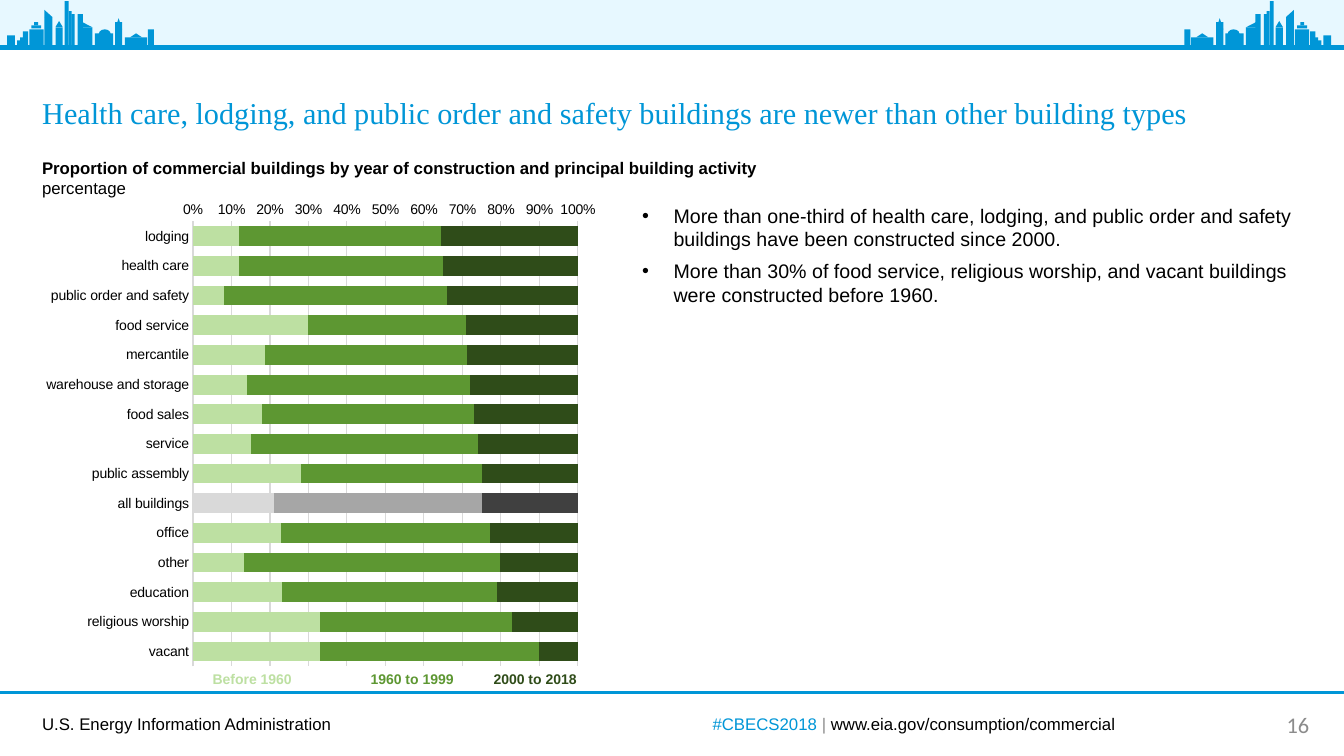
from lxml.etree import SubElement
from pptx import Presentation
from pptx.chart.data import CategoryChartData
from pptx.dml.color import RGBColor
from pptx.enum.chart import XL_CHART_TYPE, XL_TICK_MARK
from pptx.enum.shapes import MSO_CONNECTOR, MSO_SHAPE
from pptx.enum.text import MSO_ANCHOR, MSO_AUTO_SIZE, PP_ALIGN
from pptx.oxml import parse_xml
from pptx.oxml.ns import nsdecls, qn
from pptx.util import Cm, Pt

# Content
COLORS = {
    "blue": "0096D7", "sky": "E7F8FF", "black": "000000", "gray": "8C8C8C",
    "grid": "D9D9D9", "before 1960": "BDE0A2", "1960 to 1999": "5D9732",
    "2000 to 2018": "2F4C19",
}
TITLE = ("Health care, lodging, and public order and safety buildings "
         "are newer than other building types")
CAPTION = ("Proportion of commercial buildings by year of construction "
           "and principal building activity")
UNIT = "percentage"
FINDINGS = [
    "More than one-third of health care, lodging, and public order and safety "
    "buildings have been constructed since 2000.",
    "More than 30% of food service, religious worship, and vacant buildings "
    "were constructed before 1960.",
]
AGENCY = "U.S. Energy Information Administration"
LINKS = [("#CBECS2018 ", "blue"), ("| ", "gray"),
         ("www.eia.gov/consumption/commercial", "black")]
PAGE = "16"
ACTIVITIES = [
    "lodging", "health care", "public order and safety", "food service",
    "mercantile", "warehouse and storage", "food sales", "service",
    "public assembly", "all buildings", "office", "other", "education",
    "religious worship", "vacant",
]
# Period, shares, colour of the "all buildings" bar, label left, label width, wrap
PERIODS = [
    ("Before 1960", [12, 12, 8, 30, 19, 14, 18, 15, 28, 21, 23, 13, 23, 33, 33],
     "D9D9D9", 5.11, 2.82, True),
    ("1960 to 1999", [53, 53, 58, 41, 53, 58, 55, 59, 47, 54, 55, 66, 56, 50, 57],
     "A6A6A6", 9.09, 2.62, False),
    ("2000 to 2018", [36, 35, 34, 29, 29, 28, 27, 26, 25, 25, 23, 20, 21, 17, 10],
     "404040", 12.19, 2.62, False),
]

# Skyline in cm: walls stand on the ground (left, top, width)
GROUND = 1.17
WALLS = [
    (0.18, 0.89, 0.2), (0.43, 1.02, 0.08), (0.51, 0.94, 0.08), (0.58, 0.79, 0.13),
    (0.74, 0.74, 0.36), (1.12, 0.43, 0.2), (1.4, 0.69, 0.18), (1.63, 0.03, 0.1),
    (1.73, 0.28, 0.08), (1.8, 0.36, 0.08), (1.96, 0.36, 0.13), (2.08, 0.69, 0.25),
    (2.39, 0.84, 0.46), (2.9, 0.56, 0.18), (3.15, 0.94, 0.56), (3.73, 0.74, 0.15),
]
ROOFS = [
    (MSO_SHAPE.RECTANGLE, 0.79, 0.64, 0.25, 0.08),
    (MSO_SHAPE.RECTANGLE, 0.86, 0.56, 0.1, 0.08),
    (MSO_SHAPE.RIGHT_TRIANGLE, 1.12, 0.25, 0.2, 0.18),
    (MSO_SHAPE.ISOSCELES_TRIANGLE, 1.4, 0.53, 0.18, 0.15),
    (MSO_SHAPE.RIGHT_TRIANGLE, 2.08, 0.56, 0.25, 0.13),
    (MSO_SHAPE.OVAL, 2.49, 0.74, 0.3, 0.23),
    (MSO_SHAPE.ISOSCELES_TRIANGLE, 2.9, 0.46, 0.18, 0.28),
    (MSO_SHAPE.ISOSCELES_TRIANGLE, 3.28, 0.84, 0.3, 0.1),
]
WIDTH, HEIGHT = 33.87, 19.05
MIRROR = 33.73  # left edge plus mirrored right edge


def color(name):
    return RGBColor.from_string(COLORS[name])


def style(font, size, shade="black", bold=False, face="Arial"):
    font.name, font.size, font.bold = face, Pt(size), bold
    font.color.rgb = color(shade)


def add_block(preset, left, top, width, height, shade="blue", flip=False):
    block = slide.shapes.add_shape(preset, Cm(left), Cm(top), Cm(width), Cm(height))
    block.shadow.inherit = False
    block.fill.solid()
    block.fill.fore_color.rgb = color(shade)
    block.line.fill.background()
    if flip:
        block._element.spPr.find(qn("a:xfrm")).set("flipH", "1")


def add_rule(top, weight):
    rule = slide.shapes.add_connector(
        MSO_CONNECTOR.STRAIGHT, 0, Cm(top), Cm(WIDTH), Cm(top))
    rule.line.color.rgb = color("blue")
    rule.line.width = Pt(weight)
    SubElement(rule._element.spPr, qn("a:effectLst"))


def add_text(left, top, width, height, wrap=True, anchor=MSO_ANCHOR.TOP):
    frame = slide.shapes.add_textbox(
        Cm(left), Cm(top), Cm(width), Cm(height)).text_frame
    frame.word_wrap = wrap
    frame.vertical_anchor = anchor
    return frame


def move(shape, left, top, width, height):
    shape.left, shape.top = Cm(left), Cm(top)
    shape.width, shape.height = Cm(width), Cm(height)


prs = Presentation()
prs.slide_width, prs.slide_height = Cm(WIDTH), Cm(HEIGHT)
slide = prs.slides.add_slide(prs.slide_layouts[1])

# Header band with a skyline at each end
add_block(MSO_SHAPE.RECTANGLE, 0, 0, WIDTH, 1.14, "sky")
add_rule(1.19, 3.5)
skyline = [(MSO_SHAPE.RECTANGLE, left, top, width, GROUND - top)
           for left, top, width in WALLS] + ROOFS
for preset, left, top, width, height in skyline:
    add_block(preset, left, top, width, height)
    add_block(preset, MIRROR - left - width, top, width, height, flip=True)

# Title
title = slide.shapes.title
move(title, 0.81, 1.3, 32.23, 2.11)
title.text_frame.text = TITLE
title.text_frame.auto_size = MSO_AUTO_SIZE.NONE
title.text_frame.vertical_anchor = MSO_ANCHOR.BOTTOM
title.text_frame.paragraphs[0].alignment = PP_ALIGN.LEFT
style(title.text_frame.paragraphs[0].font, 21.6, "blue", face="Times New Roman")

# Findings
findings = slide.placeholders[1]
move(findings, 15.93, 5, 17.12, 2.87)
findings.text_frame.text = "\n".join(FINDINGS)
findings.text_frame.auto_size = MSO_AUTO_SIZE.NONE
for paragraph in findings.text_frame.paragraphs:
    paragraph.space_before, paragraph.space_after = Pt(0), Pt(6)
    style(paragraph.font, 14)
    properties = paragraph._p.get_or_add_pPr()
    properties.set("marL", str(Cm(0.79)))
    properties.set("indent", str(Cm(-0.79)))
    properties.find(qn("a:defRPr")).addprevious(
        parse_xml(f'<a:buChar {nsdecls("a")} char="•"/>'))

# Chart caption
caption = add_text(0.81, 3.84, 19.96, 1.27)
caption.text = CAPTION + "\n" + UNIT
for paragraph, bold in zip(caption.paragraphs, (True, False)):
    style(paragraph.font, 12, bold=bold)

# Chart of construction periods
shares = CategoryChartData()
shares.categories = ACTIVITIES
for period, values, *_ in PERIODS:
    shares.add_series(period, values)
chart = slide.shapes.add_chart(
    XL_CHART_TYPE.BAR_STACKED_100, Cm(0.81), Cm(4.85), Cm(14.48), Cm(12.19), shares).chart
chart.has_title = chart.has_legend = False
style(chart.font, 10)
bars = chart.plots[0]
bars.gap_width, bars.overlap, bars.vary_by_categories = 50, 100, False
for series, (period, _, total_shade, *_) in zip(bars.series, PERIODS):
    series.format.fill.solid()
    series.format.fill.fore_color.rgb = color(period.lower())
    total = series.points[ACTIVITIES.index("all buildings")].format.fill
    total.solid()
    total.fore_color.rgb = RGBColor.from_string(total_shade)

for axis in (chart.category_axis, chart.value_axis):
    axis.major_tick_mark = axis.minor_tick_mark = XL_TICK_MARK.NONE
    style(axis.tick_labels.font, 10)
chart.category_axis.reverse_order = True
percent_axis = chart.value_axis
percent_axis.minimum_scale, percent_axis.maximum_scale = 0, 1
percent_axis.major_unit = 0.1
percent_axis.tick_labels.number_format = "0%"
percent_axis.tick_labels.number_format_is_linked = False
percent_axis.has_major_gridlines = True
percent_axis.format.line.fill.background()
for line in (chart.category_axis.format.line, percent_axis.major_gridlines.format.line):
    line.color.rgb = color("grid")
    line.width = Pt(0.75)

# Fixed plot area, in shares of the chart
plot_area = chart._chartSpace.find(".//" + qn("c:plotArea"))
for layout in plot_area.findall(qn("c:layout")):
    plot_area.remove(layout)
layout = parse_xml(f'<c:layout {nsdecls("c")}><c:manualLayout/></c:layout>')
for tag, value in [("layoutTarget", "inner"), ("xMode", "edge"), ("yMode", "edge"),
                   ("x", 0.28), ("y", 0.06), ("w", 0.67), ("h", 0.92)]:
    SubElement(layout[0], qn("c:" + tag)).set("val", str(value))
plot_area.insert(0, layout)

# Period labels under the bars
for period, _, _, left, width, wrap in PERIODS:
    label = add_text(left, 16.76, width, 0.69, wrap)
    label.text = period
    style(label.paragraphs[0].font, 10, period.lower(), bold=True)

# Footer
add_rule(17.45, 2.25)
agency = add_text(0.81, 17.86, 9.4, 0.76)
agency.text = AGENCY
style(agency.paragraphs[0].font, 12)
links = add_text(17.32, 17.73, 11.43, 1.02, anchor=MSO_ANCHOR.MIDDLE).paragraphs[0]
links.alignment = PP_ALIGN.CENTER
for text, shade in LINKS:
    run = links.add_run()
    run.text = text
    style(run.font, 12, shade)
page = add_text(31.95, 17.75, 1.52, 1.02, anchor=MSO_ANCHOR.MIDDLE)
page.text = PAGE
page.paragraphs[0].alignment = PP_ALIGN.CENTER
style(page.paragraphs[0].font, 16, "gray", face="Calibri")

prs.save("out.pptx")
